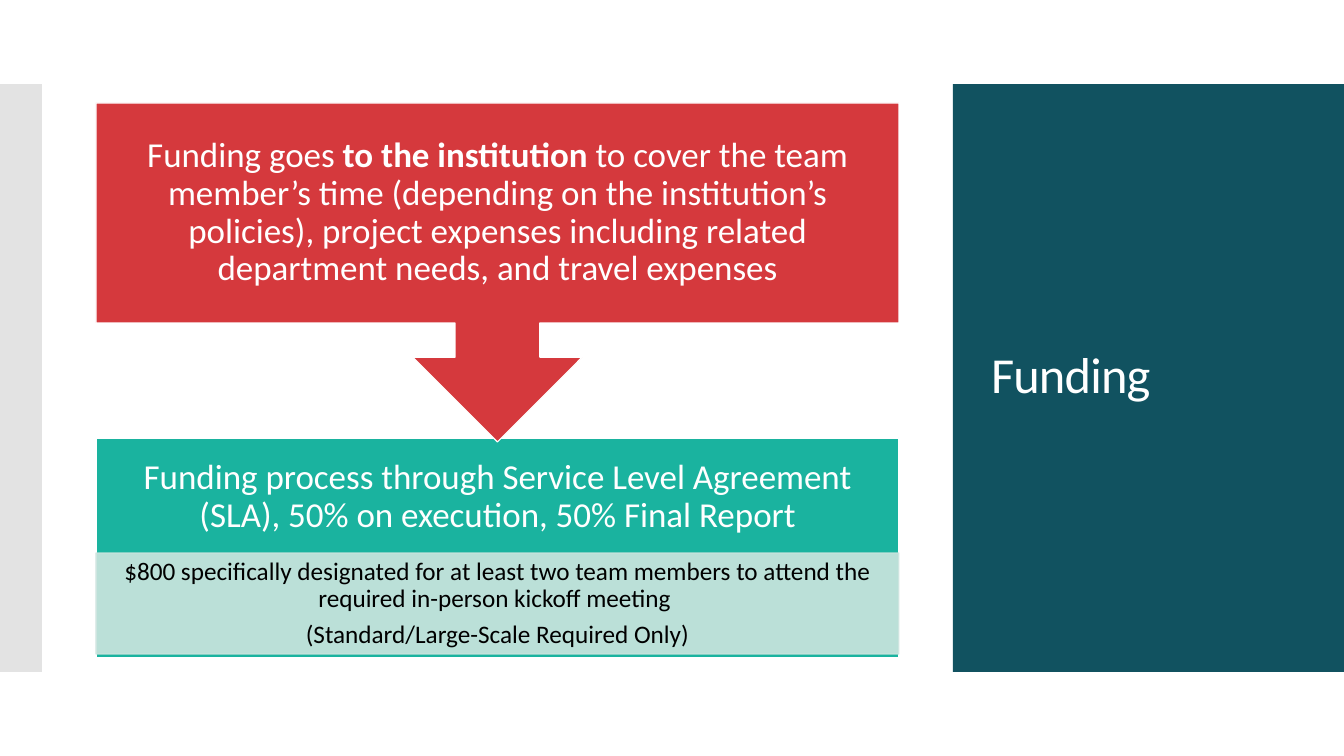
from lxml import etree
from pptx import Presentation
from pptx.dml.color import RGBColor
from pptx.enum.shapes import MSO_SHAPE
from pptx.enum.text import MSO_ANCHOR, MSO_AUTO_SIZE, PP_ALIGN
from pptx.oxml.ns import qn
from pptx.util import Emu, Pt

RECTANGLE = MSO_SHAPE.RECTANGLE
CALLOUT = MSO_SHAPE.DOWN_ARROW_CALLOUT
MIDDLE = MSO_ANCHOR.MIDDLE
LEFT, CENTER = PP_ALIGN.LEFT, PP_ALIGN.CENTER
NO_AUTOFIT = MSO_AUTO_SIZE.NONE
TITLE_ONLY = 5

WIDTH, HEIGHT = 1344, 756
EMU_PER_PX = 914400 / 100.8

WHITE, BLACK = "FFFFFF", "000000"
NAVY, GRAY = "115260", "C8C8C8"
RED, TEAL, MINT = "D5393D", "1AB39F", "CDE5DF"


def px(length):
    return Emu(round(length * EMU_PER_PX))


def color(value):
    return RGBColor.from_string(value)


def set_alpha(fill, percent):
    """Make a solid fill partly transparent."""
    alpha = etree.SubElement(fill.fore_color._xFill[0], qn("a:alpha"))
    alpha.set("val", str(percent * 1000))


def write_text(frame, paragraphs, size, ink, align=CENTER, insets=(10, 5, 10, 5),
               space_after=0.35, tracking=None):
    """Fill a frame; each paragraph is a list of (text, bold) spans."""
    frame.word_wrap = True
    frame.auto_size = NO_AUTOFIT
    frame.vertical_anchor = MIDDLE
    (frame.margin_left, frame.margin_top,
     frame.margin_right, frame.margin_bottom) = map(px, insets)
    for index, spans in enumerate(paragraphs):
        para = frame.add_paragraph() if index else frame.paragraphs[0]
        para.alignment = align
        para.line_spacing = 0.9
        para.space_after = Pt(round(size * space_after, 1))
        for text, bold in spans:
            span = para.add_run()
            span.text = text
            span.font.name = "Calibri"
            span.font.size = Pt(size)
            span.font.bold = bold
            span.font.color.rgb = color(ink)
            if tracking is not None:
                span._r.get_or_add_rPr().set("spc", str(tracking))


class FundingSlide:
    def __init__(self, deck):
        self.slide = deck.slides.add_slide(deck.slide_layouts[TITLE_ONLY])
        self.shapes = self.slide.shapes

    def box(self, left, top, width, height, fill, kind=RECTANGLE, line=None, alpha=None):
        box = self.shapes.add_shape(kind, px(left), px(top), px(width), px(height))
        box.shadow.inherit = False
        box.fill.solid()
        box.fill.fore_color.rgb = color(fill)
        if line:
            box.line.color.rgb = color(line)
            box.line.width = Pt(0.85)
        else:
            box.line.fill.background()
        if alpha:
            set_alpha(box.fill, alpha)
            if line:
                set_alpha(box.line.fill, alpha)
        return box

    def title(self, left, top, width, height, text):
        title = self.shapes.title
        title.left, title.top = px(left), px(top)
        title.width, title.height = px(width), px(height)
        write_text(title.text_frame, [[(text, False)]], 36, WHITE, align=LEFT,
                   space_after=0, tracking=-60)
        # Bring the title in front of its panel
        self.shapes._spTree.append(title._element)


def main():
    deck = Presentation()
    deck.slide_width, deck.slide_height = px(WIDTH), px(HEIGHT)
    page = FundingSlide(deck)

    # Side panels and title
    band_top, band_height = 84, 588
    page.box(953, band_top, WIDTH - 953, band_height, NAVY)
    page.title(981, 124, 325, 507, "Funding")
    page.box(0, band_top, 42, band_height, GRAY, alpha=50)

    # Process step, with room left below its text for the detail strip
    left, width, step_height = 96, 803, 220
    strip_height = 101
    process = page.box(left, 438, width, step_height, TEAL, line=WHITE)
    write_text(process.text_frame, [[
        ("Funding process through Service Level Agreement (SLA), "
         "50% on execution, 50% Final Report", False)]],
        25, WHITE, insets=(19, 19, 19, 19 + strip_height))

    # Detail strip
    strip = page.box(left, 553, width, strip_height, MINT, line=MINT, alpha=90)
    write_text(strip.text_frame, [
        [("$800 specifically designated for at least two team members "
          "to attend the required in-person kickoff meeting ", False)],
        [("(Standard/Large-Scale Required Only)", False)]],
        18, BLACK, insets=(14, 3, 14, 3))

    # First step, a box whose arrow leads to the process step
    callout_height = 339
    callout = page.box(left, 103, width, callout_height, RED, kind=CALLOUT, line=WHITE)
    for index, share in enumerate((0.25, 0.25, 0.25, step_height / callout_height)):
        callout.adjustments[index] = share
    write_text(callout.text_frame, [[
        ("Funding goes ", False),
        ("to the institution ", True),
        ("to cover the team member’s time (depending on the institution’s "
         "policies), project expenses including related department needs, "
         "and travel expenses", False)]],
        25, WHITE, insets=(19, 19, 19, 19))

    deck.save("out.pptx")


if __name__ == "__main__":
    main()
